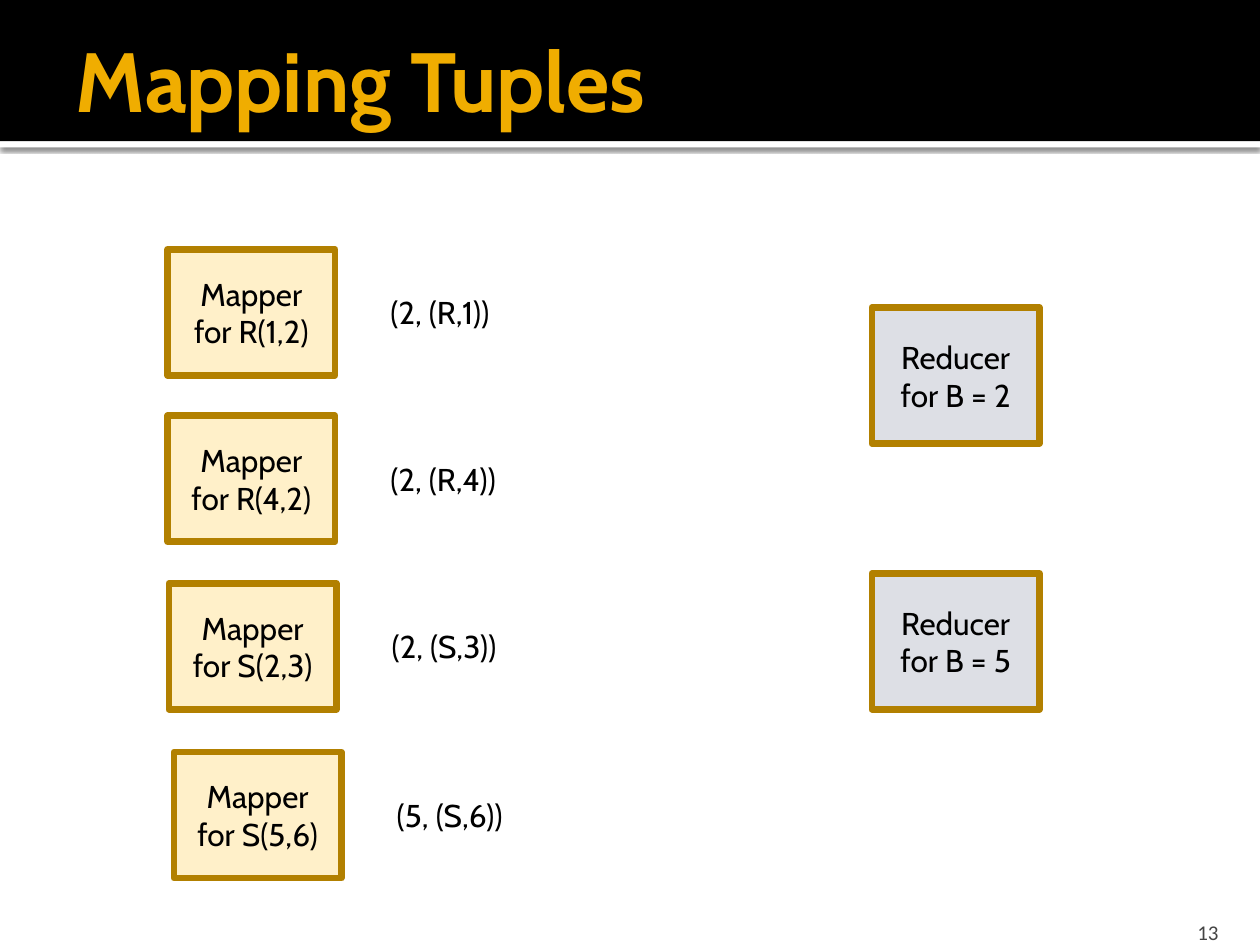
from lxml import etree
from pptx import Presentation
from pptx.dml.color import RGBColor
from pptx.enum.shapes import MSO_SHAPE
from pptx.enum.text import MSO_ANCHOR as ANCHOR, MSO_AUTO_SIZE as AUTO, PP_ALIGN as ALIGN
from pptx.oxml import parse_xml
from pptx.oxml.ns import nsdecls, qn
from pptx.util import Inches, Pt

COLORS = {
    "black": "000000", "white": "FFFFFF", "title": "F0AD00", "number": "454545",
    "mapper": "FFF0C9", "reducer": "DDDFE5", "border": "B28000",
}


def rgb(name):
    return RGBColor.from_string(COLORS[name])


def write(sp, text, size=18, font="Cabin", color="black", bold=False, align=ALIGN.LEFT,
          anchor=ANCHOR.TOP, wrap=True, fit=AUTO.NONE, insets=(0.1, 0.05, 0.1, 0.05)):
    tf = sp.text_frame
    tf.word_wrap, tf.auto_size, tf.vertical_anchor = wrap, fit, anchor
    tf.margin_left, tf.margin_top, tf.margin_right, tf.margin_bottom = map(Inches, insets)
    for i, line in enumerate(text.split("\n")):
        p = tf.add_paragraph() if i else tf.paragraphs[0]
        p.alignment = align
        r = p.add_run()
        r.text = line
        r.font.name, r.font.size, r.font.bold = font, Pt(size), bold
        r.font.color.rgb = rgb(color)


prs = Presentation()
prs.slide_width, prs.slide_height = Inches(10), Inches(7.5)
s = prs.slides.add_slide(prs.slide_layouts[5])
title = s.shapes.title

# Header: white strip with a shadow, then the black band, both behind the title
for top, height, fill in [(1.12, 0.05, "white"), (0, 1.12, "black")]:
    sp = s.shapes.add_shape(MSO_SHAPE.RECTANGLE, 0, Inches(top), Inches(10), Inches(height))
    sp.shadow.inherit = False
    sp.fill.solid()
    sp.fill.fore_color.rgb = rgb(fill)
    sp.line.fill.background()
    title.element.addprevious(sp.element)
    if fill == "white":
        effects = sp.element.spPr.find(qn("a:effectLst"))
        effects.append(parse_xml(
            f'<a:outerShdw {nsdecls("a")} blurRad="{Pt(2.5)}" dist="{Pt(0.8)}" dir="5400000" '
            'algn="t" rotWithShape="0"><a:srgbClr val="000000"><a:alpha val="60000"/>'
            '</a:srgbClr></a:outerShdw>'))

# Title
title.left, title.top, title.width, title.height = map(Inches, (0.5, 0.17, 9.5, 0.92))
write(title, "Mapping Tuples", size=48, color="title", bold=True, anchor=ANCHOR.MIDDLE,
      insets=(0.1, 0.05, 0.05, 0.05))

# Slide number
number = s.shapes.add_textbox(Inches(8.97), Inches(7.2), Inches(0.8), Inches(0.3))
write(number, "13", size=12, font="Calibri", color="number", align=ALIGN.RIGHT,
      anchor=ANCHOR.BOTTOM, insets=(0.1, 0.05, 0.1, 0))

# Mapper and reducer boxes: left, top, height, fill, text
mappers = [
    (1.33, 1.98, "R(1,2)", "(2, (R,1))"),
    (1.33, 3.3, "R(4,2)", "(2, (R,4))"),
    (1.34, 4.63, "S(2,3)", "(2, (S,3))"),
    (1.38, 5.97, "S(5,6)", "(5, (S,6))"),
]
boxes = [(left, top, 1, "mapper", f"Mapper for {tup}") for left, top, tup, _ in mappers]
boxes += [(6.92, top, 1.08, "reducer", f"Reducer\nfor B = {b}") for top, b in [(2.44, 2), (4.55, 5)]]
for left, top, height, fill, text in boxes:
    sp = s.shapes.add_shape(MSO_SHAPE.RECTANGLE, Inches(left), Inches(top),
                            Inches(1.33), Inches(height))
    sp.shadow.inherit = False
    sp.fill.solid()
    sp.fill.fore_color.rgb = rgb(fill)
    sp.line.color.rgb = rgb("border")
    sp.line.width = Pt(3.78)
    etree.SubElement(sp.element.spPr.find(qn("a:ln")), qn("a:round"))
    write(sp, text, align=ALIGN.CENTER, anchor=ANCHOR.MIDDLE)

# Key-value pair beside each mapper
for left, top, _, pair in mappers:
    sp = s.shapes.add_textbox(Inches(left + 1.67), Inches(top + 0.3), Inches(1.08), Inches(0.4))
    write(sp, pair, wrap=False, fit=AUTO.SHAPE_TO_FIT_TEXT)

prs.save("out.pptx")
